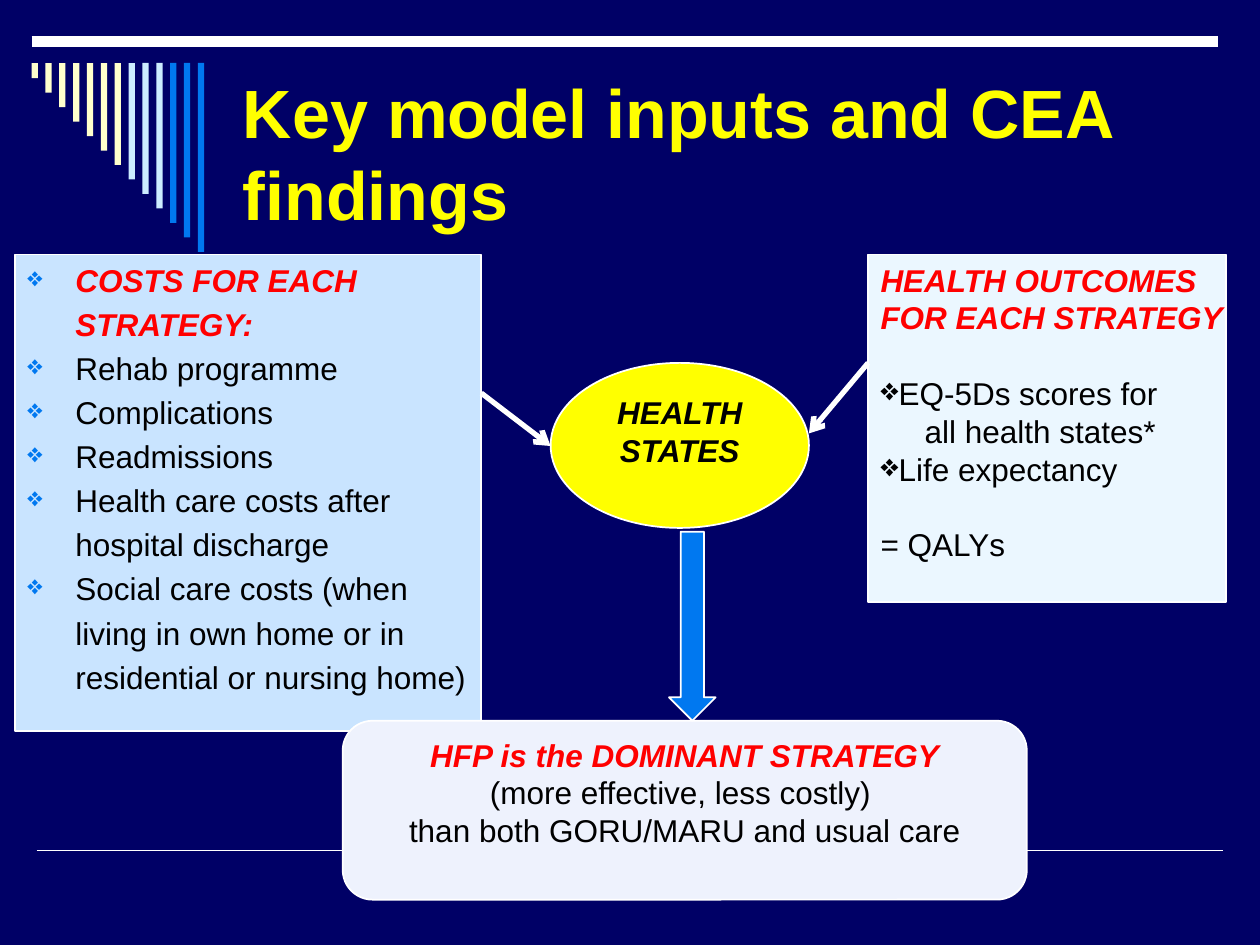
from lxml import etree
from pptx import Presentation, util as u
from pptx.dml.color import RGBColor
from pptx.enum import shapes, text
from pptx.oxml.ns import qn

COLORS = {
    "navy": "000066", "white": "FFFFFF", "black": "000000", "red": "FF0000",
    "yellow": "FFFF00", "blue": "0078F0", "pale": "CCECFF", "cream": "FFFFCC",
    "costs": "C9E4FF", "outcomes": "EBF7FF", "finding": "EEF2FD",
}
SHAPE = shapes.MSO_SHAPE


def rgb(name):
    return RGBColor.from_string(COLORS[name])


class SlideBuilder:
    font = "Arial"
    body_size = 18

    def __init__(self, slide):
        self.slide = slide

    def box(self, kind, at, fill, outlined=True):
        shape = self.slide.shapes.add_shape(kind, *map(u.Inches, at))
        shape.shadow.inherit = False
        shape.fill.solid()
        shape.fill.fore_color.rgb = rgb(fill)
        if outlined:
            shape.line.color.rgb = rgb("white")
            shape.line.width = u.Pt(1)
        else:
            shape.line.fill.background()
        return shape

    def line(self, start, end, width, arrow=False):
        line = self.slide.shapes.add_connector(
            shapes.MSO_CONNECTOR.STRAIGHT, *map(u.Inches, start + end))
        line.line.color.rgb = rgb("white")
        line.line.width = u.Pt(width)
        props = line._element.spPr
        if arrow:
            etree.SubElement(props.find(qn("a:ln")), qn("a:tailEnd"), type="arrow")
        etree.SubElement(props, qn("a:effectLst"))

    def title(self, words, at):
        frame = self.slide.shapes.add_textbox(*map(u.Inches, at)).text_frame
        frame.word_wrap = True
        frame.vertical_anchor = text.MSO_ANCHOR.MIDDLE
        frame.text = words
        self.style(frame.paragraphs[0], 39, "yellow", bold=True)

    def style(self, paragraph, size, color, bold=False, italic=False):
        for run in paragraph.runs:
            font = run.font
            font.name, font.size = self.font, u.Pt(size)
            font.bold, font.italic = bold, italic
            font.color.rgb = rgb(color)

    def label(self, shape, lines, headings, heading_color="red", centered=False):
        """Fill a shape with text; the first `headings` lines are bold italic."""
        frame = shape.text_frame
        frame.word_wrap = True
        frame.vertical_anchor = text.MSO_ANCHOR.TOP
        frame.text = "\n".join(lines)
        for i, paragraph in enumerate(frame.paragraphs):
            paragraph.alignment = text.PP_ALIGN.CENTER if centered else text.PP_ALIGN.LEFT
            heading = i < headings
            self.style(paragraph, self.body_size,
                       heading_color if heading else "black", heading, heading)
        return frame.paragraphs

    def indent(self, paragraph, left, first=0):
        props = paragraph._p.get_or_add_pPr()
        props.set("marL", str(u.Inches(left)))
        props.set("indent", str(u.Inches(first)))

    def bullet(self, paragraph, color=None, percent=100):
        props = paragraph._p.get_or_add_pPr()
        if color:
            bullet_color = etree.SubElement(props, qn("a:buClr"))
            etree.SubElement(bullet_color, qn("a:srgbClr"), val=COLORS[color])
        etree.SubElement(props, qn("a:buSzPct"), val=str(percent * 1000))
        etree.SubElement(props, qn("a:buChar"), char="❖")


def main():
    deck = Presentation()
    deck.slide_width, deck.slide_height = u.Inches(10), u.Inches(7.5)
    slide = deck.slides.add_slide(deck.slide_layouts[6])
    slide.background.fill.solid()
    slide.background.fill.fore_color.rgb = rgb("navy")
    build = SlideBuilder(slide)

    # Rules and the descending bars
    build.line((0.29, 6.75), (9.71, 6.75), 1)
    build.line((0.25, 0.33), (9.67, 0.33), 6)
    bar_colors = ["cream"] * 7 + ["pale"] * 3 + ["blue"] * 3
    bar_step = (1.5 - 0.12) / (len(bar_colors) - 1)
    for i, color in enumerate(bar_colors):
        build.box(SHAPE.RECTANGLE, (0.25 + 0.11 * i, 0.5, 0.05, 0.12 + bar_step * i),
                  color, outlined=False)

    build.title("Key model inputs and CEA findings", (1.83, 0.5, 7.67, 1.42))

    # Costs: continuation lines align with the bulleted text
    cost_lines = [
        ("COSTS FOR EACH", True), ("STRATEGY:", False),
        ("Rehab programme", True), ("Complications", True), ("Readmissions", True),
        ("Health care costs after", True), ("hospital discharge", False),
        ("Social care costs (when", True), ("living in own home or in", False),
        ("residential or nursing home)", False),
    ]
    costs = build.box(SHAPE.RECTANGLE, (0.12, 2.02, 3.7, 3.78), "costs")
    paragraphs = build.label(costs, [words for words, _ in cost_lines], headings=2)
    for paragraph, (_, bulleted) in zip(paragraphs, cost_lines):
        paragraph.space_after = u.Pt(3.6)
        build.indent(paragraph, 0.38, -0.38 if bulleted else 0)
        if bulleted:
            build.bullet(paragraph, "blue", 85)

    # Health outcomes
    outcomes = build.box(SHAPE.RECTANGLE, (6.89, 2.02, 2.84, 2.76), "outcomes")
    outcomes.text_frame.margin_right = 0
    _, _, scores, states, life, qalys = build.label(
        outcomes,
        ["HEALTH OUTCOMES", "FOR EACH STRATEGY", "EQ-5Ds scores for",
         "all health states*", "Life expectancy", "= QALYs"], headings=2)
    for section_start in (scores, qalys):
        section_start.space_before = u.Pt(21.6)
    for item in (scores, life):
        build.indent(item, 0)
        build.bullet(item)
    build.indent(states, 0.35)

    # Health states and the finding
    health_states = build.box(SHAPE.OVAL, (4.37, 2.88, 2.05, 1.31), "yellow")
    build.label(health_states, ["HEALTH", "STATES"], headings=2,
                heading_color="black", centered=True)
    finding = build.box(SHAPE.ROUNDED_RECTANGLE, (2.72, 5.72, 5.43, 1.42), "finding")
    build.label(finding, ["HFP is the DOMINANT STRATEGY",
                          "(more effective, less costly) ",
                          "than both GORU/MARU and usual care"],
                headings=1, centered=True)

    # Arrows
    build.line((3.82, 3.12), (4.37, 3.54), 3, arrow=True)
    build.box(SHAPE.DOWN_ARROW, (5.31, 4.22, 0.37, 1.5), "blue")
    build.line((6.89, 2.88), (6.42, 3.44), 3, arrow=True)

    deck.save("out.pptx")


if __name__ == "__main__":
    main()
